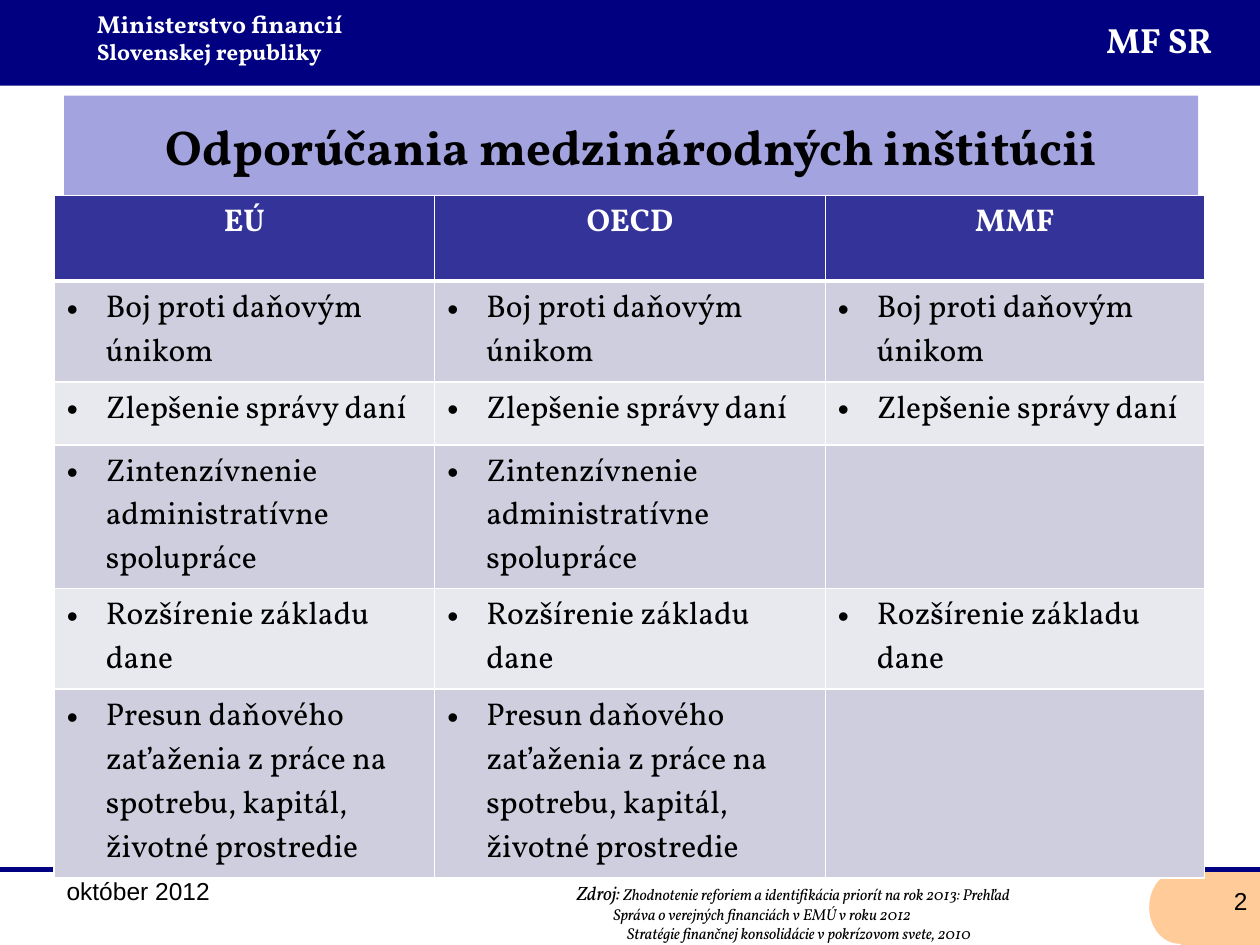
from lxml import etree
from pptx import Presentation
from pptx.dml.color import RGBColor
from pptx.enum import shapes, text
from pptx.oxml import ns
from pptx.util import Inches, Pt

THEME = {
    "navy": "000080", "peach": "FFCC99", "lilac": "A3A3E0",
    "header": "333399", "odd": "CECEDE", "even": "E8E8EF",
    "white": "FFFFFF", "black": "000000",
    "serif": "Vollkorn", "sans": "Arial",
    "title": 28, "brand": 20, "body": 18, "small": 14, "ministry2": 13,
    "label": 11, "source": 9,
}


def style(font, size, color="black", face="serif", bold=False, italic=False):
    font.name, font.size = THEME[face], Pt(THEME[size])
    font.bold, font.italic = bold, italic
    font.color.rgb = RGBColor.from_string(THEME[color])


def sub(parent, tag, **attrs):
    return etree.SubElement(parent, ns.qn(tag), attrs)


prs = Presentation()
prs.slide_width, prs.slide_height = Inches(10), Inches(7.5)
s = prs.slides.add_slide(prs.slide_layouts[5])

# Header band and page-number tab
for kind, box, color, turn in [
    (shapes.MSO_SHAPE.RECTANGLE, (9.37, 6.92, 0.63, 0.58), "peach", 0),
    (shapes.MSO_SHAPE.FLOWCHART_DELAY, (9.12, 6.91, 0.48, 0.58), "peach", 180),
    (shapes.MSO_SHAPE.RECTANGLE, (0, 0, 10, 0.68), "navy", 0),
]:
    sp = s.shapes.add_shape(kind, *map(Inches, box))
    sp.rotation = turn
    sp.shadow.inherit = False
    sp.fill.solid()
    sp.fill.fore_color.rgb = RGBColor.from_string(THEME[color])
    sp.line.fill.background()

# Footer rule
rule = s.shapes.add_connector(shapes.MSO_CONNECTOR.STRAIGHT,
                              Inches(0), Inches(6.9), Inches(10), Inches(6.9))
rule.line.color.rgb = RGBColor.from_string(THEME["navy"])
rule.line.width = Pt(3)
sub(rule._element.spPr, "a:effectLst")

# Ministry name, short name and page number
left, center, right = text.PP_ALIGN.LEFT, text.PP_ALIGN.CENTER, text.PP_ALIGN.RIGHT
for box, align, lines, color, face, bold in [
    ((0.67, 0.02, 2.85, 0.56), left,
     [("Ministerstvo financií", "small"), ("Slovenskej republiky", "ministry2")],
     "white", "serif", True),
    ((8.43, 0.1, 1.54, 0.6), center, [("MF SR", "brand")], "white", "serif", True),
    ((7.67, 6.98, 2.33, 0.37), right, [("2", "small")], "black", "sans", False),
]:
    tf = s.shapes.add_textbox(*map(Inches, box)).text_frame
    tf.word_wrap = True
    for i, (line, size) in enumerate(lines):
        p = tf.add_paragraph() if i else tf.paragraphs[0]
        p.text, p.alignment = line, align
        style(p.font, size, color, face, bold)

# Title
title = s.shapes.title
title.left, title.top = Inches(0.51), Inches(0.76)
title.width, title.height = Inches(9), Inches(0.79)
title.fill.solid()
title.fill.fore_color.rgb = RGBColor.from_string(THEME["lilac"])
tf = title.text_frame
tf.text = "Odporúčania medzinárodných inštitúcii"
tf.vertical_anchor = text.MSO_ANCHOR.MIDDLE
tf.paragraphs[0].alignment = center
style(tf.paragraphs[0].font, "title", bold=True)

# Date and sources
tf = s.shapes.add_textbox(Inches(0.43), Inches(6.9), Inches(8.66), Inches(0.71)).text_frame
tf.word_wrap = True
p = tf.paragraphs[0]
tabs = sub(p._p.get_or_add_pPr(), "a:tabLst")
sub(tabs, "a:tab", pos=str(Inches(4.05)), algn="l")
for words, size, face, italic in [
    ("október 2012\t", "small", "sans", False),
    ("Zdroj: ", "label", "serif", True),
    ("Zhodnotenie reforiem a\u00a0identifikácia priorít na rok 2013: Prehľad",
     "source", "serif", True),
]:
    r = p.add_run()
    r.text = words
    style(r.font, size, face=face, italic=italic)
for words, indent in [
    ("Správa o verejných financiách v EMÚ v roku 2012", 4.34),
    ("Stratégie finančnej konsolidácie v\u00a0pokrízovom svete, 2010", 4.45),
]:
    p = tf.add_paragraph()
    p.text = words
    p._p.get_or_add_pPr().set("marL", str(Inches(indent)))
    style(p.font, "source", italic=True)

# Recommendations: wording, number of institutions giving it, row height
institutions = ["EÚ", "OECD", "MMF"]
advice = [
    ("Boj proti daňovým únikom", 3, 0.8),
    ("Zlepšenie správy daní", 3, 0.5),
    ("Zintenzívnenie administratívne spolupráce", 2, 1.14),
    ("Rozšírenie základu dane", 3, 0.8),
    ("Presun daňového zaťaženia z práce na spotrebu, kapitál, životné prostredie",
     2, 1.5),
]
rows = [institutions] + [[words] * n + [""] * (3 - n) for words, n, _ in advice]
heights = [0.68] + [height for _, _, height in advice]
table = s.shapes.add_table(len(rows), 3, Inches(0.43), Inches(1.55),
                           Inches(9.13), Inches(sum(heights))).table
for col, width in zip(table.columns, [3.02, 3.1, 3.01]):
    col.width = Inches(width)
for row, height in zip(table.rows, heights):
    row.height = Inches(height)

for i, row in enumerate(rows):
    for j, words in enumerate(row):
        cell = table.cell(i, j)
        cell.fill.solid()
        fill = "header" if i == 0 else "odd" if i % 2 else "even"
        cell.fill.fore_color.rgb = RGBColor.from_string(THEME[fill])
        p = cell.text_frame.paragraphs[0]
        p.text = words
        style(p.font, "body", "black" if i else "white", bold=i == 0)
        if i == 0:
            p.alignment = center
        elif words:
            pPr = p._p.get_or_add_pPr()
            pPr.set("marL", str(Inches(0.31)))
            pPr.set("indent", str(-Inches(0.31)))
            bullet_font = etree.Element(ns.qn("a:buFont"), typeface=THEME["sans"])
            bullet = etree.Element(ns.qn("a:buChar"), char="•")
            pPr.insert(0, bullet_font)
            pPr.insert(1, bullet)
        # White borders, thicker under the header
        tcPr = cell._tc.get_or_add_tcPr()
        for k, side in enumerate("LRTB"):
            thick = (i, side) in [(0, "B"), (1, "T")]
            ln = etree.Element(ns.qn("a:ln" + side), w=str(Pt(3 if thick else 1)))
            sub(sub(ln, "a:solidFill"), "a:srgbClr", val=THEME["white"])
            tcPr.insert(k, ln)

prs.save("out.pptx")
